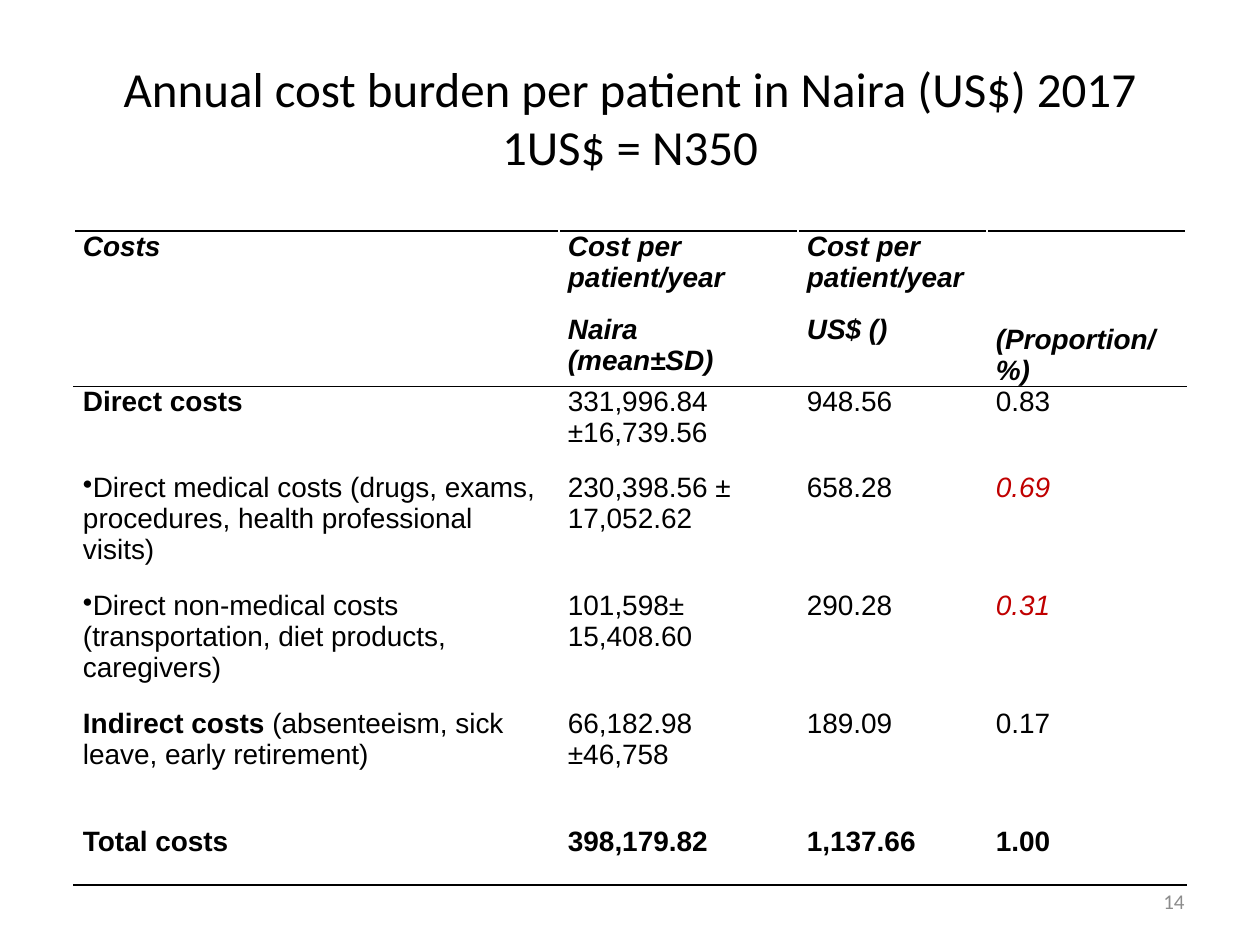
"""Build a slide with a table of the annual cost burden per patient."""
from lxml.etree import SubElement
from pptx import Presentation
from pptx.dml.color import RGBColor
from pptx.enum.text import MSO_ANCHOR as Anchor, PP_ALIGN as Align
from pptx.oxml.ns import qn
from pptx.util import Pt

PX = 914400 // 126
BLACK, RED, GREY = "000000", "C00000", "8C8C8C"


def style(run, size, font, color, bold=False, italic=False):
    """Format one run."""
    run.font.size, run.font.name = Pt(size), font
    run.font.bold, run.font.italic = bold, italic
    run.font.color.rgb = RGBColor.from_string(color)


def rule(cell, edge):
    """Draw a black 1 pt line on one edge of a cell."""
    line = SubElement(cell._tc.get_or_add_tcPr(), qn(f"a:{edge}"), w=str(Pt(1)))
    SubElement(SubElement(line, qn("a:solidFill")), qn("a:srgbClr"), val=BLACK)


prs = Presentation()
prs.slide_width, prs.slide_height = 1260 * PX, 945 * PX
slide = prs.slides.add_slide(prs.slide_layouts[5])

title = slide.shapes.title
title.left, title.top, title.width, title.height = 63 * PX, 38 * PX, 1134 * PX, 158 * PX
title.text_frame.text = "Annual cost burden per patient in Naira (US$) 2017\v1US$ = N350"
title.text_frame.vertical_anchor = Anchor.MIDDLE
heading = title.text_frame.paragraphs[0]
heading.alignment = Align.CENTER
for run in heading.runs:
    style(run, 28, "Calibri", BLACK)

page_number = slide.shapes.add_textbox(903 * PX, 876 * PX, 294 * PX, 50 * PX).text_frame
page_number.word_wrap = True
page_number.vertical_anchor = Anchor.MIDDLE
page_number.text = "14"
page_number.paragraphs[0].alignment = Align.RIGHT
style(page_number.paragraphs[0].runs[0], 12, "Calibri", GREY)

costs = [
    ["Costs", "Cost per patient/year\nNaira (mean±SD)", "Cost per patient/year\nUS$ ()", "(Proportion/%)"],
    ["Direct costs", "331,996.84 ±16,739.56", "948.56", "0.83"],
    ["Direct medical costs (drugs, exams, procedures, health professional visits)",
     "230,398.56 ± 17,052.62", "658.28", "0.69"],
    ["Direct non-medical costs (transportation, diet products, caregivers)",
     "101,598± 15,408.60", "290.28", "0.31"],
    ["Indirect costs ", "66,182.98 ±46,758", "189.09", "0.17"],
    ["Total costs", "398,179.82", "1,137.66", "1.00"],
]
indirect_examples = "(absenteeism, sick leave, early retirement)"
column_widths = [485, 239, 189, 199]
row_heights = [147, 86, 118, 118, 118, 59]
header, direct, medical, non_medical, indirect, total = range(len(costs))
parts_of_direct = (medical, non_medical)

table = slide.shapes.add_table(
    len(costs), len(column_widths), 74 * PX, 231 * PX,
    sum(column_widths) * PX, sum(row_heights) * PX).table
table.horz_banding = False
for column, width in zip(table.columns, column_widths):
    column.width = width * PX
for row, height in zip(table.rows, row_heights):
    row.height = height * PX

for r, entries in enumerate(costs):
    for c, entry in enumerate(entries):
        cell = table.cell(r, c)
        cell.margin_left = cell.margin_right = 9 * PX
        cell.margin_top = cell.margin_bottom = 0
        if r in (header, direct):
            rule(cell, "lnT")
        if r in (header, total):
            rule(cell, "lnB")
        cell.fill.background()

        cell.text_frame.text = entry
        is_share = c == 3 and r in parts_of_direct
        is_bold = r in (header, total) or (c == 0 and r in (direct, indirect))
        for paragraph in cell.text_frame.paragraphs:
            paragraph.space_before = Pt(12)
            style(paragraph.runs[0], 16, "Arial", RED if is_share else BLACK,
                  is_bold, r == header or is_share)
            if c == 0 and r in parts_of_direct:
                SubElement(paragraph._p.get_or_add_pPr(), qn("a:buChar"), char="•")

table.cell(header, 3).vertical_anchor = Anchor.BOTTOM
examples = table.cell(indirect, 0).text_frame.paragraphs[0].add_run()
examples.text = indirect_examples
style(examples, 16, "Arial", BLACK)

prs.save("out.pptx")
